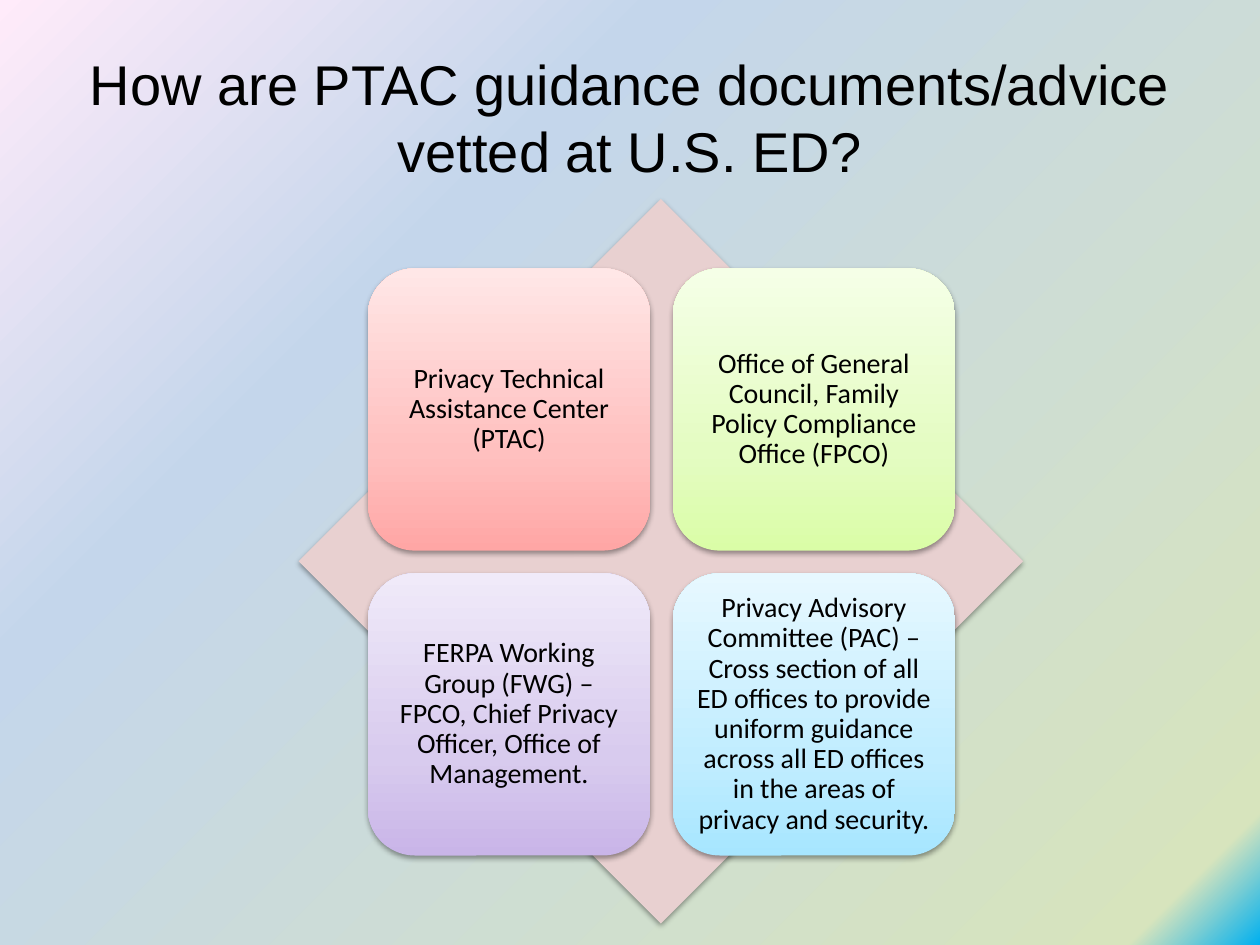
from lxml import etree
from pptx import Presentation
from pptx.dml.color import RGBColor
from pptx.enum.shapes import MSO_SHAPE
from pptx.enum.text import MSO_ANCHOR, PP_ALIGN
from pptx.oxml import parse_xml
from pptx.oxml.ns import nsdecls, qn
from pptx.util import Inches, Pt

DIAMOND, ROUNDED = MSO_SHAPE.DIAMOND, MSO_SHAPE.ROUNDED_RECTANGLE
MIDDLE, CENTER = MSO_ANCHOR.MIDDLE, PP_ALIGN.CENTER

COLORS = {"text": "000000", "diamond": "E8D0D0", "shadow": "000000"}
BACKGROUND_STOPS = [(0, "00B0F0"), (6, "D7E4BD"), (70, "C4D6EB"), (100, "FFEBFA")]
FROM_BOTTOM_RIGHT = ('<a:path path="circle"><a:fillToRect l="100000" t="100000"/></a:path>'
                     '<a:tileRect r="-100000" b="-100000"/>')
UPWARD = '<a:lin ang="16200000" scaled="0"/>'

TILES = [
    ("Privacy Technical Assistance Center (PTAC)",
     ("FFA6A5", "FFC0BF", "FFE7E7")),
    ("Office of General Council, Family Policy Compliance Office (FPCO)",
     ("DAFDA7", "E4FCC2", "F5FFE7")),
    ("FERPA Working Group (FWG) – FPCO, Chief Privacy Officer, Office of Management.",
     ("C9B5E8", "D8CBEE", "F0EAF9")),
    ("Privacy Advisory Committee (PAC) – Cross section of all ED offices to provide "
     "uniform guidance across all ED offices in the areas of privacy and security.",
     ("A7E6FF", "C1EDFF", "E7F8FF")),
]
TILE_STOPS = (0, 35, 100)
TILE_LEFT, TILE_TOP, TILE_SIZE, TILE_PITCH = 2.92, 2.13, 2.24, 2.42


def set_gradient(holder, stops, direction):
    """Replace the solid fill inside a properties element by a gradient."""
    stop_list = "".join(
        f'<a:gs pos="{position * 1000}"><a:srgbClr val="{color}"/></a:gs>'
        for position, color in stops)
    gradient = parse_xml(f'<a:gradFill {nsdecls("a")} rotWithShape="1">'
                         f'<a:gsLst>{stop_list}</a:gsLst>{direction}</a:gradFill>')
    holder.replace(holder.find(qn("a:solidFill")), gradient)


class SlideBuilder:
    def __init__(self, slide):
        self.slide = slide
        self.frame_format = {"word_wrap": True, "vertical_anchor": MIDDLE}
        self.tile_margins = {f"margin_{side}": Inches(0.07)
                             for side in ("left", "top", "right", "bottom")}

    def background(self, stops):
        self.slide.background.fill.solid()
        set_gradient(self.slide._element.find(".//" + qn("p:bgPr")),
                     stops, FROM_BOTTOM_RIGHT)

    def set_text(self, frame, text, font_name, size, **frame_format):
        for name, value in {**self.frame_format, **frame_format}.items():
            setattr(frame, name, value)
        frame.text = text
        paragraph = frame.paragraphs[0]
        paragraph.alignment = CENTER
        for name, value in {"name": font_name, "size": Pt(size)}.items():
            setattr(paragraph.font, name, value)
        paragraph.font.color.rgb = RGBColor.from_string(COLORS["text"])
        return paragraph

    def title(self, text):
        title = self.slide.shapes.title
        place = {"left": 0.5, "top": 0.3, "width": 9, "height": 1.25}
        for name, value in place.items():
            setattr(title, name, Inches(value))
        self.set_text(title.text_frame, text, "Arial", 32)

    def shadowed_square(self, kind, left, top, size, color):
        shape = self.slide.shapes.add_shape(
            kind, Inches(left), Inches(top), Inches(size), Inches(size))
        shape.fill.solid()
        shape.fill.fore_color.rgb = RGBColor.from_string(color)
        shape.line.fill.background()
        shape.shadow.inherit = False
        effects = shape._element.spPr.find(qn("a:effectLst"))
        shadow = etree.SubElement(effects, qn("a:outerShdw"), blurRad="40000",
                                  dist="20000", dir="5400000", rotWithShape="0")
        shade = etree.SubElement(shadow, qn("a:srgbClr"), val=COLORS["shadow"])
        etree.SubElement(shade, qn("a:alpha"), val="38000")
        return shape

    def tile(self, left, top, text, shades):
        tile = self.shadowed_square(ROUNDED, left, top, TILE_SIZE, shades[0])
        set_gradient(tile._element.spPr, zip(TILE_STOPS, shades), UPWARD)
        paragraph = self.set_text(tile.text_frame, text, "Calibri", 16, **self.tile_margins)
        paragraph.line_spacing = 0.9


def main():
    presentation = Presentation()
    presentation.slide_width, presentation.slide_height = Inches(10), Inches(7.5)
    builder = SlideBuilder(presentation.slides.add_slide(presentation.slide_layouts[5]))
    builder.background(BACKGROUND_STOPS)
    builder.title("How are PTAC guidance documents/advice vetted at U.S. ED?")
    builder.shadowed_square(DIAMOND, 2.37, 1.58, 5.75, COLORS["diamond"])
    for index, (text, shades) in enumerate(TILES):
        row, column = divmod(index, 2)
        builder.tile(TILE_LEFT + column * TILE_PITCH, TILE_TOP + row * TILE_PITCH,
                     text, shades)
    presentation.save("out.pptx")


if __name__ == "__main__":
    main()
